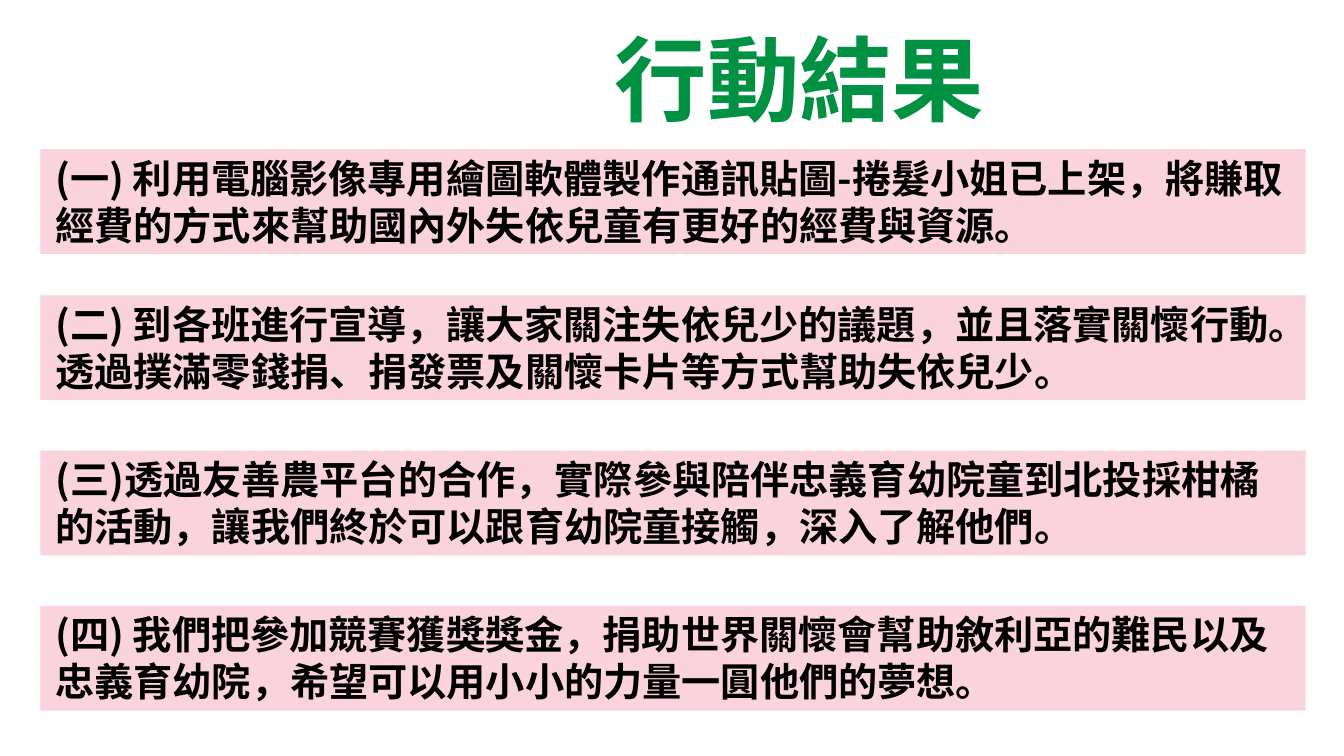
"""Build the slide that lists four results of the action."""
from dataclasses import dataclass

from lxml import etree
from pptx import Presentation
from pptx import util as u
from pptx.dml.color import RGBColor
from pptx.enum import shapes, text
from pptx.oxml import ns


@dataclass(frozen=True)
class Theme:
    font: str = "Noto Sans CJK SC"
    heading: RGBColor = RGBColor(0x00, 0x92, 0x42)
    band: RGBColor = RGBColor(0xFA, 0xD3, 0xDC)
    ink: RGBColor = RGBColor(0, 0, 0)
    heading_size: int = 66
    result_size: int = 28


@dataclass(frozen=True)
class Result:
    top: float
    wording: str


THEME = Theme()
RESULTS = [
    Result(1.48, "(一) 利用電腦影像專用繪圖軟體製作通訊貼圖-捲髮小姐已上架，將賺取經費的方式來幫助國內外失依兒童有更好的經費與資源。"),
    Result(2.93, "(二) 到各班進行宣導，讓大家關注失依兒少的議題，並且落實關懷行動。透過撲滿零錢捐、捐發票及關懷卡片等方式幫助失依兒少。"),
    Result(4.47, "(三)透過友善農平台的合作，實際參與陪伴忠義育幼院童到北投採柑橘的活動，讓我們終於可以跟育幼院童接觸，深入了解他們。"),
    Result(6.01, "(四) 我們把參加競賽獲獎獎金，捐助世界關懷會幫助敘利亞的難民以及忠義育幼院，希望可以用小小的力量一圓他們的夢想。"),
]


def apply(target, formats: dict) -> None:
    for attribute, value in formats.items():
        setattr(target, attribute, value)


def write(frame, wording: str, size: int, color: RGBColor, alignment):
    paragraph = frame.paragraphs[0]
    paragraph.alignment = alignment
    run = paragraph.add_run()
    run.text = wording
    apply(run.font, {"name": THEME.font, "size": u.Pt(size), "bold": True})
    run.font.color.rgb = color
    east_asian = etree.SubElement(run.font._element, ns.qn("a:ea"))
    east_asian.set("typeface", THEME.font)
    return paragraph


def draw_heading(slide, wording: str) -> None:
    heading = slide.shapes.title
    apply(heading, {"left": u.Inches(3.22), "top": u.Inches(0.26),
                    "width": u.Inches(9.42), "height": u.Inches(1.15)})
    apply(heading.text_frame, {"vertical_anchor": text.MSO_ANCHOR.MIDDLE,
                               "word_wrap": True,
                               "auto_size": text.MSO_AUTO_SIZE.NONE})
    paragraph = write(heading.text_frame, wording, THEME.heading_size,
                      THEME.heading, text.PP_ALIGN.CENTER)
    paragraph.line_spacing = 0.9


def draw_result(slide, result: Result) -> None:
    band = slide.shapes.add_shape(
        shapes.MSO_SHAPE.RECTANGLE, u.Inches(0.4), u.Inches(result.top),
        u.Inches(12.55), u.Inches(1.04))
    band.shadow.inherit = False
    band.fill.solid()
    band.fill.fore_color.rgb = THEME.band
    band.line.fill.background()
    apply(band.text_frame, {"word_wrap": True,
                            "vertical_anchor": text.MSO_ANCHOR.TOP,
                            "auto_size": text.MSO_AUTO_SIZE.SHAPE_TO_FIT_TEXT})
    paragraph = write(band.text_frame, result.wording, THEME.result_size,
                      THEME.ink, text.PP_ALIGN.LEFT)
    paragraph._p.get_or_add_pPr().set("marL", str(u.Inches(0.05)))


def main() -> None:
    deck = Presentation()
    apply(deck, {"slide_width": u.Inches(13.33), "slide_height": u.Inches(7.5)})
    slide = deck.slides.add_slide(deck.slide_layouts.get_by_name("Title Only"))
    draw_heading(slide, "行動結果")
    for result in RESULTS:
        draw_result(slide, result)
    deck.save("out.pptx")


if __name__ == "__main__":
    main()
